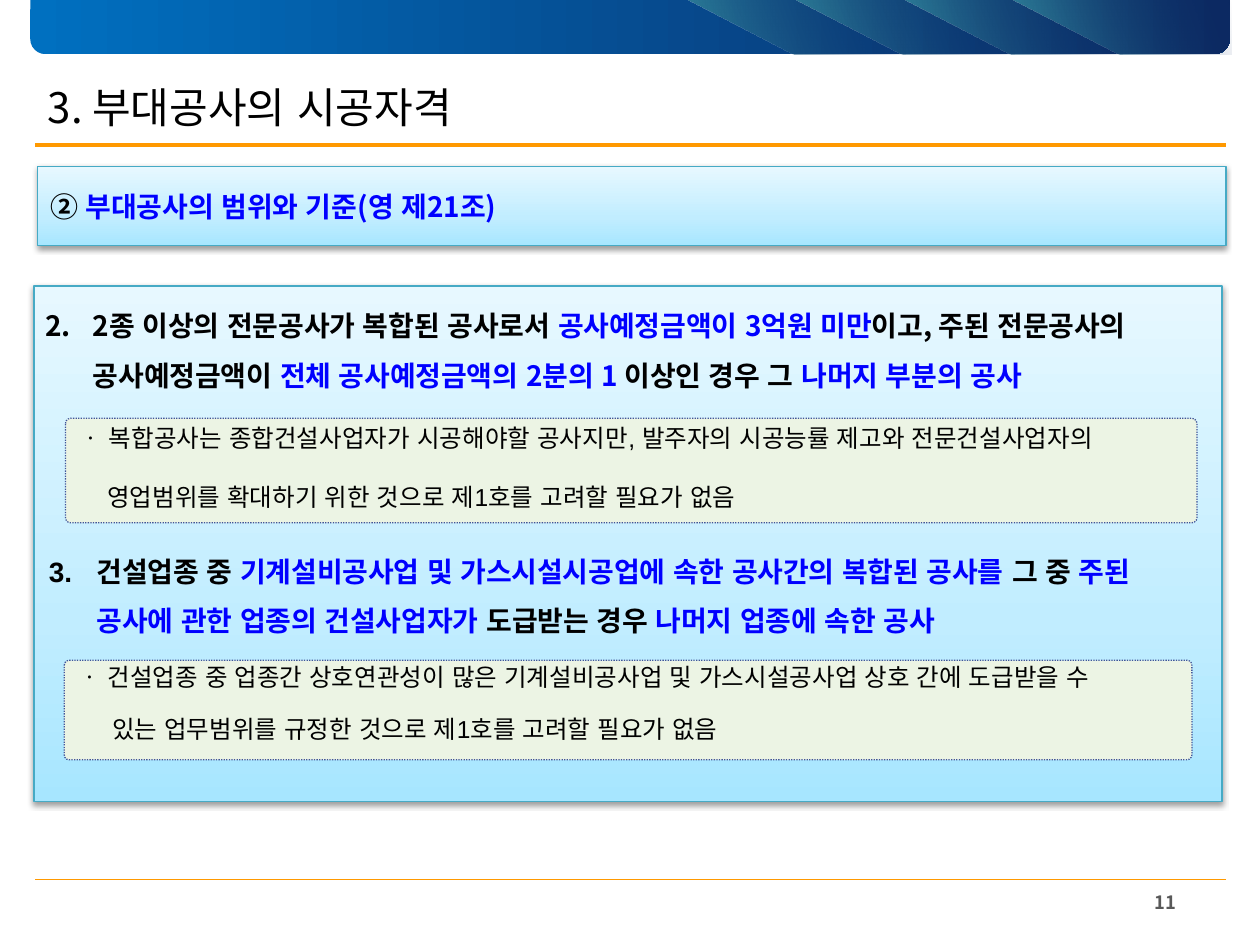
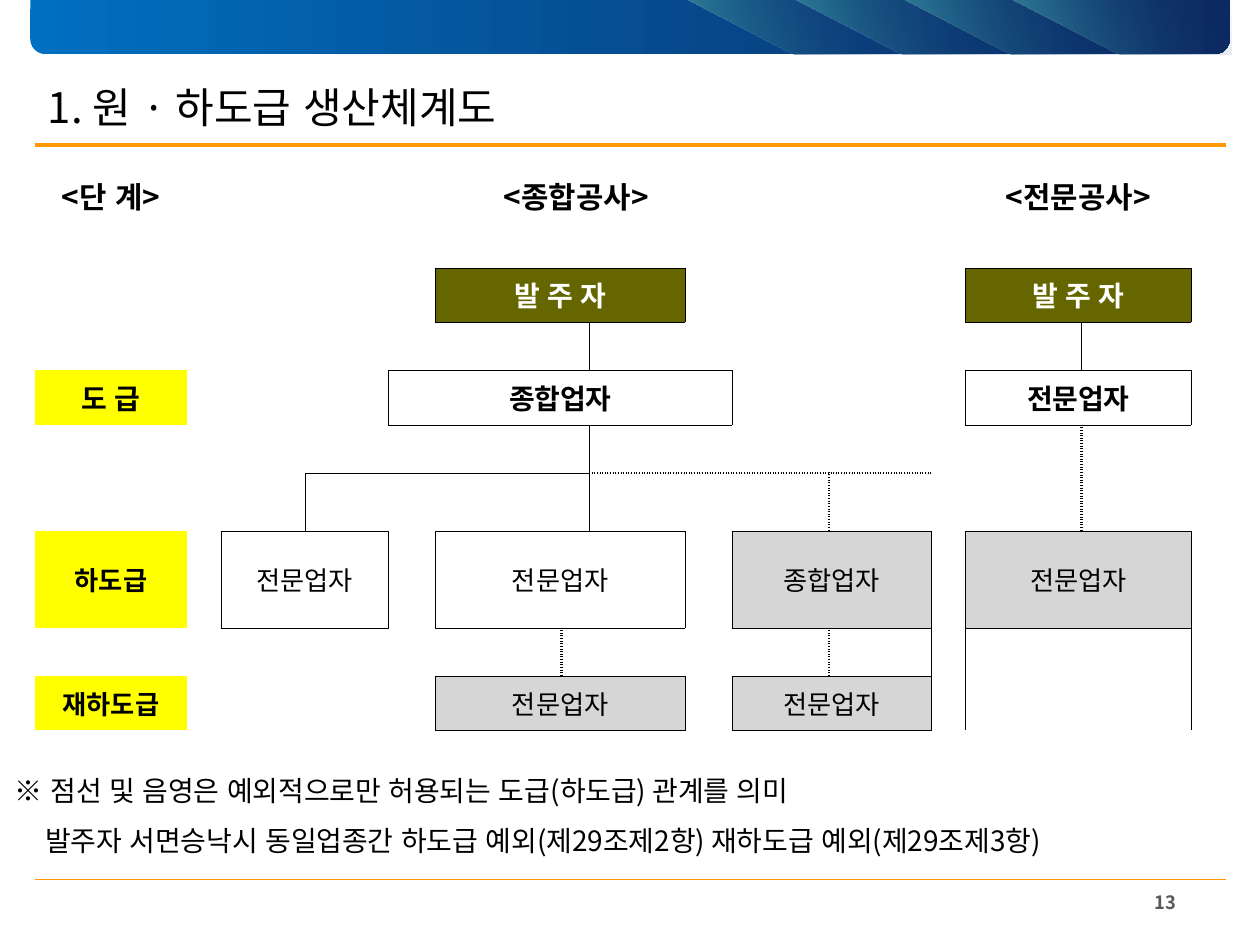
from itertools import product

from pptx import Presentation
from pptx.dml.color import RGBColor
from pptx.enum.dml import MSO_LINE
from pptx.enum.shapes import MSO_CONNECTOR, MSO_SHAPE
from pptx.enum.text import MSO_ANCHOR, PP_ALIGN
from pptx.oxml import parse_xml
from pptx.oxml.ns import nsdecls, qn
from pptx.util import Inches, Pt

# Shared look
WIDTH, HEIGHT = 10, 7.5
LEFT, RIGHT = 0.28, 9.73
FONT, NOTE_FONT, HANGUL_FONT = "Noto Sans CJK KR", "Arial", "Arial"
BLACK, WHITE, BLUE, GREY = "000000", "FFFFFF", "0000FF", "595959"
ORANGE, OLIVE, YELLOW, SHADE = "FF9900", "666600", "FFFF00", "D6D6D6"
PANEL_EDGE, NOTE_FILL, NOTE_EDGE = "46AAC5", "ECF4E4", "415599"
BAND = [(0, "0070C0", 100), (100, "0C2962", 100)]
STREAK = [(0, "31859C", 100), (100, "0C2962", 0)]
PANEL = [(0, "A7E6FF", 100), (35, "C1EDFF", 100), (100, "E7F8FF", 100)]

# Content of slide 11: runs are (text, colour)
SCOPE_HEADING = [("② ", BLACK), ("부대공사의 범위와 기준(영 제21조)", BLUE)]
RULES = [
    dict(number=2, box=(0.26, 2.27, 9.43, 0.86), runs=[
        ("2종 이상의 전문공사가 복합된 공사로서 ", BLACK),
        ("공사예정금액이 3억원 미만", BLUE),
        ("이고, 주된 전문공사의 공사예정금액이 ", BLACK),
        ("전체 공사예정금액의 2분의 1 ", BLUE),
        ("이상인 경우 그 ", BLACK),
        ("나머지 부분의 공사", BLUE)]),
    dict(number=3, box=(0.29, 4.22, 9.4, 0.86), runs=[
        ("건설업종 중 ", BLACK),
        ("기계설비공사업 및 가스시설시공업에 속한 공사간의 복합된 공사를 ", BLUE),
        ("그 중 ", BLACK),
        ("주된 공사에 관한 업종의 건설사업자가 ", BLUE),
        ("도급받는 경우 ", BLACK),
        ("나머지 업종에 속한 공사", BLUE)]),
]
NOTES = [
    dict(box=(0.52, 3.32, 8.98, 0.83), line=16, gap=17.5, indent=0.22, lines=[
        "ㆍ 복합공사는 종합건설사업자가 시공해야할 공사지만, 발주자의 시공능률 제고와 전문건설사업자의",
        "영업범위를 확대하기 위한 것으로 제1호를 고려할 필요가 없음"]),
    dict(box=(0.51, 5.24, 8.95, 0.79), line=14, gap=16, indent=0.27, lines=[
        "ㆍ 건설업종 중 업종간 상호연관성이 많은 기계설비공사업 및 가스시설공사업 상호 간에 도급받을 수",
        "있는 업무범위를 규정한 것으로 제1호를 고려할 필요가 없음"]),
]

# Content of slide 13: a chart of parties on a table grid
GRID_WIDTH, GRID_HEIGHT = 9.45, 4.49
COLUMNS = [1.2, 0.27, 0.67, 0.22, 0.22, 0.22, 0.37, 0.22, 0.78, 0.22,
           0.76, 0.37, 0.77, 0.81, 0.27, 0.39, 0.53, 0.48, 0.39, 0.27]
ROWS = [0.43, 0.38, 0.43, 0.38, 0.43, 0.38, 0.46, 0.38, 0.38, 0.38, 0.43]
STYLES = {
    "heading": dict(size=17, bold=True),
    "stage": dict(size=16, bold=True, fill=YELLOW),
    "lower stage": dict(size=15, bold=True, fill=YELLOW),
    "owner": dict(size=16, bold=True, color=WHITE, fill=OLIVE, framed=True),
    "contractor": dict(size=16, bold=True, framed=True),
    "subcontractor": dict(size=15, framed=True),
    "exception": dict(size=15, fill=SHADE, framed=True),
}
PARTIES = [  # row, column, row span, column span, text, style
    (0, 0, 1, 1, "<단 계>", "heading"),
    (0, 2, 1, 12, "<종합공사>", "heading"),
    (0, 14, 1, 6, "<전문공사>", "heading"),
    (2, 7, 1, 4, "발 주 자", "owner"),
    (2, 15, 1, 4, "발 주 자", "owner"),
    (4, 0, 1, 1, "도 급", "stage"),
    (4, 6, 1, 6, "종합업자", "contractor"),
    (4, 15, 1, 4, "전문업자", "contractor"),
    (7, 0, 2, 1, "하도급", "lower stage"),
    (7, 2, 2, 4, "전문업자", "subcontractor"),
    (7, 7, 2, 4, "전문업자", "subcontractor"),
    (7, 12, 2, 2, "종합업자", "exception"),
    (7, 15, 2, 4, "전문업자", "exception"),
    (10, 0, 1, 1, "재하도급", "lower stage"),
    (10, 7, 1, 4, "전문업자", "exception"),
    (10, 12, 1, 2, "전문업자", "exception"),
]
GAPS = [  # merged empty cells: row, column, row span, column span
    (1, 2, 1, 12), (1, 14, 1, 6), (2, 2, 1, 4), (2, 12, 1, 2),
    (3, 2, 1, 4), (3, 7, 1, 3), (3, 12, 1, 2), (4, 2, 1, 4), (4, 12, 1, 2),
    (5, 2, 1, 4), (5, 6, 1, 4), (5, 10, 1, 2), (5, 12, 1, 2), (5, 15, 2, 2), (5, 17, 2, 2),
    (6, 3, 1, 3), (6, 7, 1, 3), (7, 1, 2, 1), (7, 14, 4, 1), (7, 19, 4, 1),
    (9, 2, 1, 2), (9, 4, 1, 2), (9, 6, 1, 2), (9, 9, 1, 2), (9, 15, 2, 4),
    (10, 2, 1, 3), (10, 5, 1, 2),
]
SOLID, DOTTED, FINE_DOTTED = (0.28, "solid"), (1.7, "dot"), (1.41, "dot")
DROPS = [  # column edge, rows, stroke
    (10, (3,), SOLID), (10, (5, 6), SOLID), (3, (6,), SOLID), (17, (3,), SOLID),
    (17, (5, 6), DOTTED), (13, (6,), DOTTED), (9, (9,), FINE_DOTTED), (13, (9,), FINE_DOTTED),
]
BRANCHES = [(6, range(3, 10), SOLID), (6, range(10, 14), DOTTED)]  # row edge, columns, stroke
LEGEND = ["※ 점선 및 음영은 예외적으로만 허용되는 도급(하도급) 관계를 의미",
          "발주자 서면승낙시 동일업종간 하도급 예외(제29조제2항) 재하도급 예외(제29조제3항)"]


def rgb(code):
    return RGBColor.from_string(code)


def inches(box):
    return [Inches(value) for value in box]


def write(frame, paragraphs, size=16, font=FONT, color=BLACK, bold=False,
          align=PP_ALIGN.LEFT, anchor=MSO_ANCHOR.TOP, spacing=None,
          gap=0, indent=0, number=None):
    """Fill a frame; gap and indent apply to the paragraphs after the first."""
    frame.word_wrap = True
    frame.vertical_anchor = anchor
    for index, runs in enumerate(paragraphs):
        paragraph = frame.add_paragraph() if index else frame.paragraphs[0]
        paragraph.alignment = align
        if spacing:
            paragraph.line_spacing = spacing
        paragraph.space_before = Pt(gap if index else 0)
        properties = paragraph._p.get_or_add_pPr()
        if index and indent:
            properties.set("marL", str(Inches(indent)))
        if number:
            properties.set("marL", str(Inches(0.38)))
            properties.set("indent", str(-Inches(0.38)))
            properties.append(parse_xml(
                f'<a:buAutoNum {nsdecls("a")} type="arabicPeriod" startAt="{number}"/>'))
        for text, tint in [(runs, color)] if isinstance(runs, str) else runs:
            run = paragraph.add_run()
            run.text = text
            run.font.size, run.font.bold, run.font.name = Pt(size), bold, font
            run.font.color.rgb = rgb(tint)
            run._r.get_or_add_rPr().append(
                parse_xml(f'<a:ea {nsdecls("a")} typeface="{HANGUL_FONT}"/>'))


def write_box(slide, box, paragraphs, **fmt):
    write(slide.shapes.add_textbox(*inches(box)).text_frame, paragraphs, **fmt)


def gradient(shape, stops, angle):
    shape.fill.background()
    marks = "".join(
        f'<a:gs pos="{place * 1000}"><a:srgbClr val="{code}">'
        f'<a:alpha val="{opacity * 1000}"/></a:srgbClr></a:gs>'
        for place, code, opacity in stops)
    properties = shape._element.spPr
    properties.replace(properties.find(qn("a:noFill")), parse_xml(
        f'<a:gradFill {nsdecls("a")} rotWithShape="1"><a:gsLst>{marks}</a:gsLst>'
        f'<a:lin ang="{angle * 60000}" scaled="0"/></a:gradFill>'))


def rule(slide, y, weight):
    line = slide.shapes.add_connector(MSO_CONNECTOR.STRAIGHT, *inches((LEFT, y, RIGHT, y)))
    line.line.color.rgb, line.line.width = rgb(ORANGE), Pt(weight)
    line._element.spPr.append(parse_xml(f'<a:effectLst {nsdecls("a")}/>'))


def start_slide(deck, title, number):
    """Title, top band with streaks, rules and page number."""
    slide = deck.slides.add_slide(deck.slide_layouts[5])
    rule(slide, 1.15, 2)
    rule(slide, 6.98, 0.8)
    band = slide.shapes.add_shape(MSO_SHAPE.ROUND_2_SAME_RECTANGLE, *inches((0.24, 0, 9.52, 0.43)))
    band.adjustments[0], band.adjustments[1] = 0, 0.28
    gradient(band, BAND, 0)
    decor = [band]
    for index in range(4):
        x = 5.45 + 0.86 * index
        outline = slide.shapes.build_freeform(Inches(x), 0)
        outline.add_line_segments([inches(point) for point in
                                   ((x + 1.74, 0), (x + 1.74, 0.43), (x + 0.86, 0.43))])
        streak = outline.convert_to_shape()
        gradient(streak, STREAK, 340)
        decor.append(streak)
    for part in decor:
        part.line.fill.background()
        part.shadow.inherit = False
    heading = slide.shapes.title
    heading.left, heading.top, heading.width, heading.height = inches((LEFT, 0.54, 7.97, 0.61))
    write(heading.text_frame, [title], size=24, anchor=MSO_ANCHOR.MIDDLE)
    write_box(slide, (8.62, 7.02, 1.26, 0.29), [number], size=10.5, color=GREY,
              bold=True, align=PP_ALIGN.CENTER)
    return slide


def add_panel(slide, box):
    panel = slide.shapes.add_shape(MSO_SHAPE.RECTANGLE, *inches(box))
    gradient(panel, PANEL, 270)
    panel.line.color.rgb, panel.line.width = rgb(PANEL_EDGE), Pt(0.75)
    panel.shadow.inherit = False
    panel._element.spPr.find(qn("a:effectLst")).append(parse_xml(
        f'<a:outerShdw {nsdecls("a")} blurRad="{Pt(3.1)}" dist="{Pt(1.6)}" dir="5400000" '
        'rotWithShape="0"><a:srgbClr val="000000"><a:alpha val="38000"/></a:srgbClr></a:outerShdw>'))
    return panel


def add_note(slide, note):
    card = slide.shapes.add_shape(MSO_SHAPE.ROUNDED_RECTANGLE, *inches(note["box"]))
    card.adjustments[0] = 0.05
    card.shadow.inherit = False
    card.fill.solid()
    card.fill.fore_color.rgb = rgb(NOTE_FILL)
    card.line.color.rgb, card.line.width = rgb(NOTE_EDGE), Pt(0.75)
    card.line.dash_style = MSO_LINE.ROUND_DOT
    card.text_frame.margin_top = card.text_frame.margin_bottom = Inches(0.04)
    write(card.text_frame, note["lines"], size=14, font=NOTE_FONT,
          spacing=Pt(note["line"]), gap=note["gap"], indent=note["indent"])


def plan_borders(spans):
    """Map each (row, column) to its strokes by side."""
    borders = {place: {} for place in product(range(len(ROWS)), range(len(COLUMNS)))}

    def vertical(edge, rows, stroke):
        for row in rows:
            borders[row, edge - 1]["R"] = borders[row, edge]["L"] = stroke

    def horizontal(edge, columns, stroke):
        for column in columns:
            borders[edge - 1, column]["B"] = stroke
            if edge < len(ROWS):
                borders[edge, column]["T"] = stroke

    for drop in DROPS:
        vertical(*drop)
    for branch in BRANCHES:
        horizontal(*branch)
    for row, column, tall, wide, _, style in PARTIES:
        if STYLES[style].get("framed"):
            for edge in (column, column + wide):
                vertical(edge, range(row, row + tall), SOLID)
            for edge in (row, row + tall):
                horizontal(edge, range(column, column + wide), SOLID)
    # A merged cell takes the far strokes of its span
    for row, column, tall, wide in spans:
        for side, far in (("R", (row, column + wide - 1)), ("B", (row + tall - 1, column))):
            borders[row, column][side] = borders[far].get(side)
    return borders


def border_xml(side, stroke):
    if not stroke:
        return f'<a:ln{side} {nsdecls("a")} w="0"><a:noFill/></a:ln{side}>'
    weight, dash = stroke
    return (f'<a:ln{side} {nsdecls("a")} w="{Pt(weight)}"><a:solidFill><a:srgbClr val="{BLACK}"/>'
            f'</a:solidFill><a:prstDash val="{dash}"/></a:ln{side}>')


def add_party_grid(slide):
    table = slide.shapes.add_table(len(ROWS), len(COLUMNS), *inches(
        (LEFT, 1.31, GRID_WIDTH, GRID_HEIGHT))).table
    table.first_row = table.horz_banding = False
    table._tbl.tblPr.find(qn("a:tableStyleId")).text = "{2D5ABB26-0587-4C30-8999-92F81FD0307C}"
    for column, width in zip(table.columns, COLUMNS):
        column.width = Inches(width * GRID_WIDTH / sum(COLUMNS))
    for row, height in zip(table.rows, ROWS):
        row.height = Inches(height * GRID_HEIGHT / sum(ROWS))
    spans = GAPS + [party[:4] for party in PARTIES]
    for place, strokes in plan_borders(spans).items():
        cell = table.cell(*place)
        cell.margin_left = cell.margin_right = Inches(0.07)
        cell.margin_top = cell.margin_bottom = Inches(0.02)
        properties = cell._tc.get_or_add_tcPr()
        for side in "LRTB":
            properties.append(parse_xml(border_xml(side, strokes.get(side))))
        cell.fill.background()
    for row, column, tall, wide in spans:
        if tall * wide > 1:
            table.cell(row, column).merge(table.cell(row + tall - 1, column + wide - 1))
    for row, column, _, _, text, style in PARTIES:
        fmt = {key: value for key, value in STYLES[style].items() if key not in ("fill", "framed")}
        cell = table.cell(row, column)
        if "fill" in STYLES[style]:
            cell.fill.solid()
            cell.fill.fore_color.rgb = rgb(STYLES[style]["fill"])
        write(cell.text_frame, [text], align=PP_ALIGN.CENTER, spacing=1.15, **fmt)
        cell.vertical_anchor = MSO_ANCHOR.MIDDLE


def main():
    deck = Presentation()
    deck.slide_width, deck.slide_height = Inches(WIDTH), Inches(HEIGHT)

    # Scope of incidental works
    scope = start_slide(deck, "3. 부대공사의 시공자격", "11")
    write(add_panel(scope, (0.3, 1.32, 9.43, 0.63)).text_frame, [SCOPE_HEADING],
          bold=True, anchor=MSO_ANCHOR.MIDDLE)
    add_panel(scope, (0.27, 2.27, 9.43, 4.09))
    for item in RULES:
        write_box(scope, item["box"], [item["runs"]], bold=True, spacing=Pt(28.5),
                  number=item["number"])
    for note in NOTES:
        add_note(scope, note)

    # Contracting tiers
    tiers = start_slide(deck, "1. 원 · 하도급 생산체계도", "13")
    add_party_grid(tiers)
    write_box(tiers, (0.02, 5.96, 9.55, 0.91), LEGEND, spacing=Pt(28.5), indent=0.24)

    deck.save("out.pptx")


if __name__ == "__main__":
    main()
